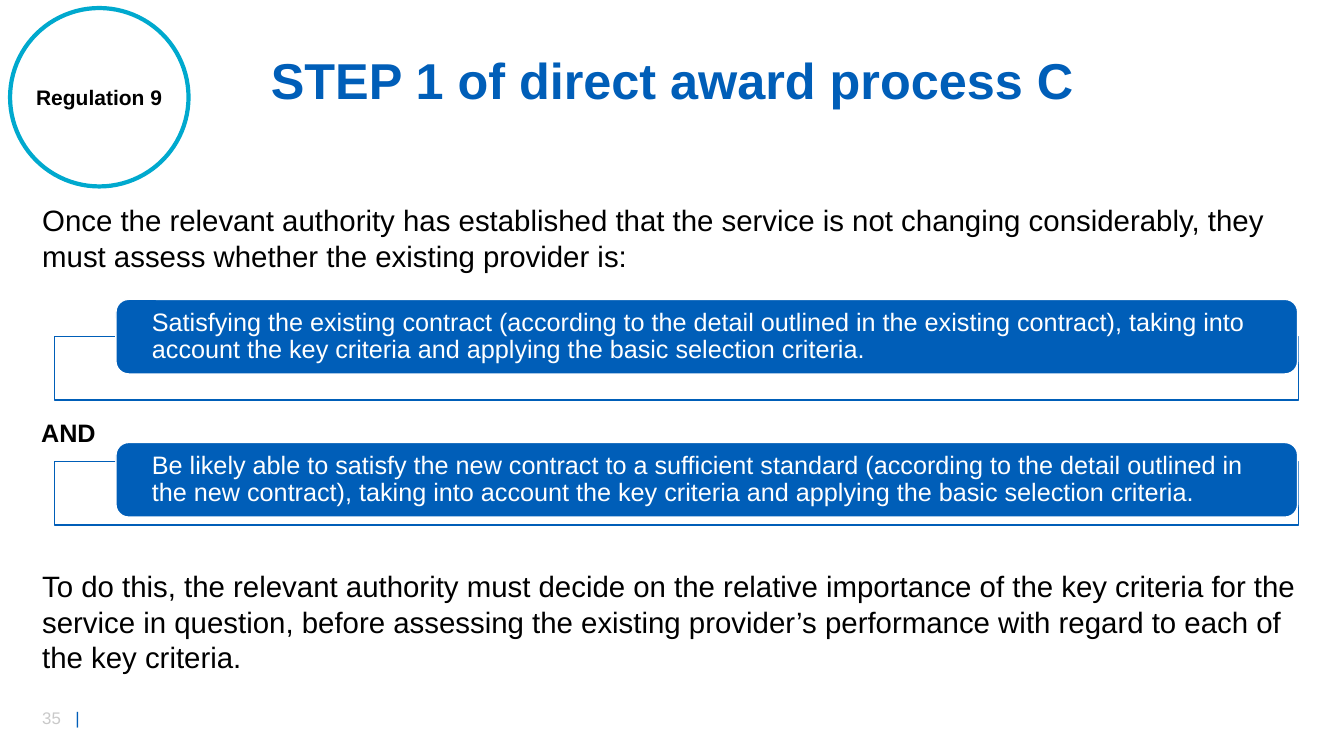
"""Build the slide on step 1 of direct award process C."""
from lxml.etree import SubElement
from pptx import Presentation
from pptx.dml.color import RGBColor
from pptx.enum.shapes import MSO_SHAPE
from pptx.enum.text import MSO_ANCHOR, MSO_AUTO_SIZE, PP_ALIGN
from pptx.oxml.ns import qn
from pptx.util import Pt

PX = 9144
COLORS = {"blue": "005EB8", "aqua": "00A9CE", "white": "FFFFFF",
          "black": "000000", "gray": "C9C9C9"}


class Page:
    """Hold the style and the current slide."""

    def __init__(self, deck, font="Arial"):
        self.font = font
        self.slide = deck.slides.add_slide(deck.slide_layouts[6])

    def color(self, name):
        return RGBColor.from_string(COLORS[name])

    def fill_in(self, frame, runs, size, bold=False, align=PP_ALIGN.LEFT, lead=None):
        para = frame.paragraphs[0]
        para.alignment = align
        if lead:
            para.line_spacing = lead
        for words, color in runs:
            run = para.add_run()
            run.text = words
            run.font.name = self.font
            run.font.size = Pt(size)
            run.font.bold = bold
            run.font.color.rgb = self.color(color)
        return para

    def text(self, box, runs, size, wrap=True, anchor=MSO_ANCHOR.TOP, grow=True, **style):
        frame = self.slide.shapes.add_textbox(*(n * PX for n in box)).text_frame
        frame.word_wrap = wrap
        frame.vertical_anchor = anchor
        frame.auto_size = MSO_AUTO_SIZE.SHAPE_TO_FIT_TEXT if grow else MSO_AUTO_SIZE.NONE
        return self.fill_in(frame, runs, size, **style)

    def shape(self, kind, box, fill, line, width):
        shape = self.slide.shapes.add_shape(kind, *(n * PX for n in box))
        shape.shadow.inherit = False
        shape.fill.solid()
        shape.fill.fore_color.rgb = self.color(fill)
        shape.line.color.rgb = self.color(line)
        shape.line.width = Pt(width)
        return shape

    def panel(self, box):
        panel = self.shape(MSO_SHAPE.RECTANGLE, box, "white", "blue", 1)
        tint = panel._element.spPr.find(qn("a:solidFill"))[0]
        SubElement(tint, qn("a:alpha"), val="90000")

    def card(self, box, words):
        card = self.shape(MSO_SHAPE.ROUNDED_RECTANGLE, box, "blue", "white", 1)
        card.adjustments[0] = 0.17
        frame = card.text_frame
        frame.word_wrap = True
        frame.vertical_anchor = MSO_ANCHOR.MIDDLE
        frame.margin_left = frame.margin_right = 32 * PX
        frame.margin_top = frame.margin_bottom = 0
        self.fill_in(frame, [(words, "white")], 18, lead=0.9)

    def tab(self, para, pos):
        tabs = SubElement(para._p.get_or_add_pPr(), qn("a:tabLst"))
        SubElement(tabs, qn("a:tab"), pos=str(pos * PX), algn="l")


def main():
    deck = Presentation()
    deck.slide_width, deck.slide_height = 1333 * PX, 750 * PX
    page = Page(deck)

    number = page.text((32, 697, 71, 30), [("35\t", "gray"), ("|", "blue")], 12)
    page.tab(number, 33)
    page.text((250, 41, 834, 84), [("STEP 1 of direct award process C", "blue")], 36,
              anchor=MSO_ANCHOR.MIDDLE, grow=False, bold=True,
              align=PP_ALIGN.CENTER, lead=0.9)
    page.shape(MSO_SHAPE.OVAL, (10, 8, 177, 177), "white", "aqua", 3)
    page.text((26, 79, 146, 35), [("Regulation 9", "black")], 15, wrap=False, bold=True)

    bodies = [
        (196, 81, "Once the relevant authority has established that the service is not "
         "changing considerably, they must assess whether the existing provider is:"),
        (559, 116, "To do this, the relevant authority must decide on the relative "
         "importance of the key criteria for the service in question, before assessing "
         "the existing provider’s performance with regard to each of the key criteria."),
    ]
    for top, height, words in bodies:
        page.text((32, top, 1264, height), [(words, "black")], 21)

    page.text((31, 409, 100, 40), [("AND", "black")], 18, bold=True)
    tests = [
        (334, 297, "Satisfying the existing contract (according to the detail outlined in "
         "the existing contract), taking into account the key criteria and applying the "
         "basic selection criteria."),
        (458, 439, "Be likely able to satisfy the new contract to a sufficient standard "
         "(according to the detail outlined in the new contract), taking into account "
         "the key criteria and applying the basic selection criteria."),
    ]
    for low, high, words in tests:
        page.panel((54, low, 1234, 63))
        page.card((115, high, 1172, 74), words)

    deck.save("out.pptx")


if __name__ == "__main__":
    main()
